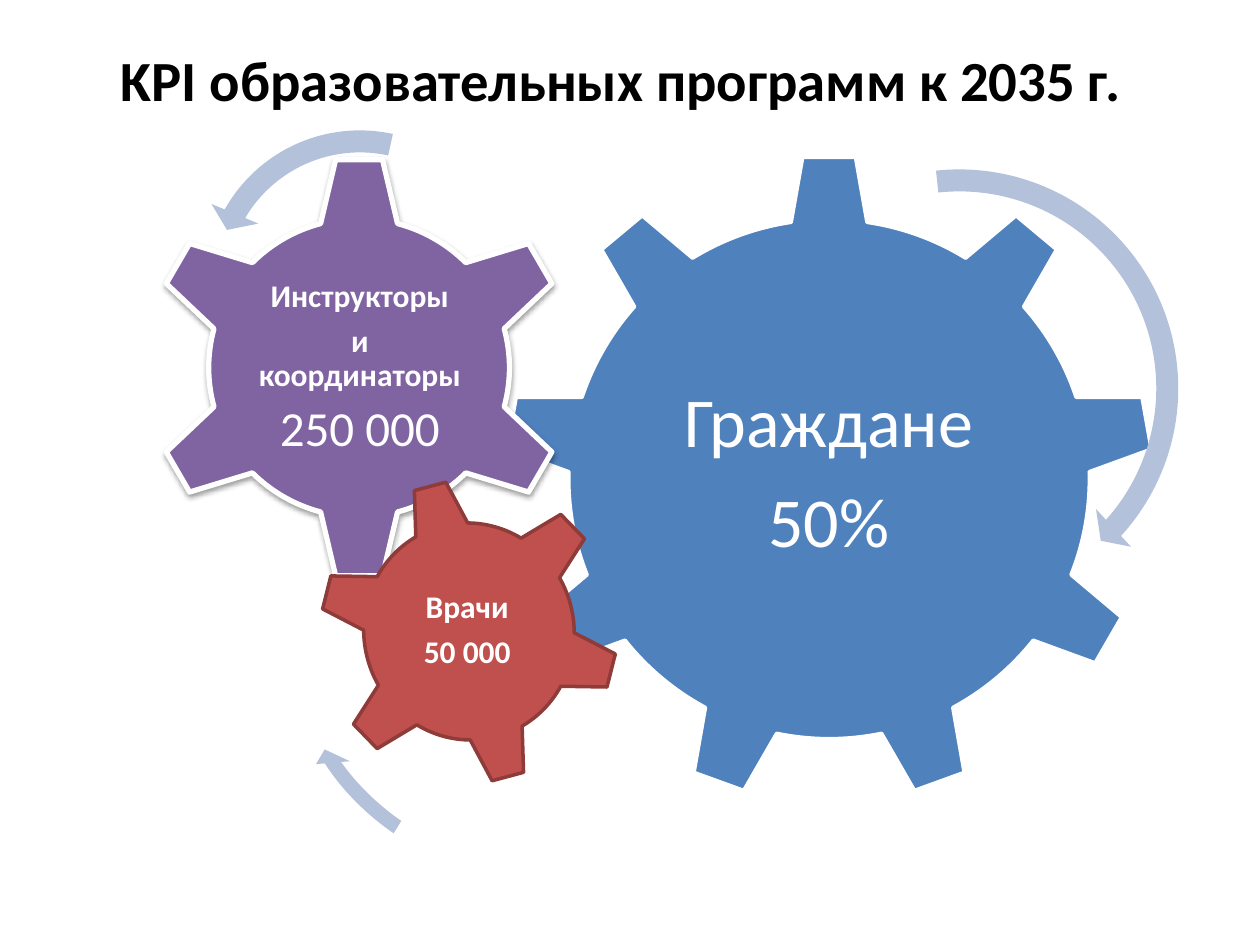
from dataclasses import dataclass

from lxml.etree import SubElement
from pptx import Presentation
from pptx.dml.color import RGBColor
from pptx.enum.shapes import MSO_SHAPE
from pptx.enum.text import MSO_ANCHOR, PP_ALIGN
from pptx.oxml.ns import qn
from pptx.util import Cm, Pt


@dataclass(frozen=True)
class Theme:
    font: str = "Calibri"
    title: str = "000000"
    light: str = "FFFFFF"
    citizens: str = "4F81BD"
    instructors: str = "8064A2"
    doctors: str = "C0504D"
    doctors_edge: str = "8E3B39"
    arrow: str = "B3C1DB"
    title_size: float = 32.4
    large: int = 40
    medium: int = 28
    small: int = 18


THEME = Theme()

# Boxes are left, top, width, height in centimetres.
# Text lines are (text, size, bold).
TITLE = ("KPI образовательных программ к 2035 г.", THEME.title_size, True)
TITLE_BOX = (1.09, 0, 22.86, 3.18)

GEARS = [
    dict(kind=MSO_SHAPE.GEAR_9, box=(10.16, 3.12, 13.11, 13.08),
         fill=THEME.citizens, edge=THEME.light, edge_width=2,
         text_box=(12.8, 6.2, 7.82, 6.73), inset=0.15,
         lines=[("Граждане", THEME.large, False), ("50%", THEME.large, False)]),
    dict(kind=MSO_SHAPE.GEAR_6, box=(2.92, 3.12, 8.64, 8.59),
         fill=THEME.instructors, edge=THEME.light, edge_width=3, shadow=True,
         text_box=(5.11, 5.31, 4.29, 4.24), inset=0.08,
         lines=[("Инструкторы", THEME.small, True),
                ("и координаторы", THEME.small, True),
                ("250 000", THEME.medium, False)]),
    dict(kind=MSO_SHAPE.GEAR_6, box=(6.43, 9.63, 6.05, 6.2), rotation=345,
         fill=THEME.doctors, edge=THEME.doctors_edge, edge_width=2,
         text_box=(7.72, 11, 3.4, 3.45), inset=0.05,
         lines=[("Врачи", THEME.small, True), ("50 000", THEME.small, True)]),
]

# Angles are in degrees: head width, head end, tail start.
ARROWS = [
    dict(kind=MSO_SHAPE.CIRCULAR_ARROW, box=(14.63, 3.12, 9.42, 9.42),
         thickness=0.047, angles=(4.98, 42.15, 263.89), head=0.055),
    dict(kind=MSO_SHAPE.LEFT_CIRCULAR_ARROW, box=(3.84, 2.34, 6.83, 6.83), rotation=35,
         thickness=0.065, angles=(7.17, 174.82, 247.3), head=0.075),
    dict(kind=MSO_SHAPE.CIRCULAR_ARROW, box=(6.68, 11.2, 4.88, 7.37), rotation=306.6,
         thickness=0.06, angles=(6.57, 221.9, 175.14), head=0.07),
]


def color(value):
    return RGBColor.from_string(value)


def add_text(slide, box, lines, *, ink, inset=0.25, line_spacing=1.0, gap=0):
    """Add centred lines; gap is the space after each, as a share of its size."""
    shape = slide.shapes.add_textbox(*map(Cm, box))
    frame = shape.text_frame
    frame.word_wrap = True
    frame.vertical_anchor = MSO_ANCHOR.MIDDLE
    frame.margin_left = frame.margin_right = Cm(inset)
    frame.margin_top = frame.margin_bottom = Cm(inset)
    for index, (text, size, bold) in enumerate(lines):
        paragraph = frame.add_paragraph() if index else frame.paragraphs[0]
        paragraph.alignment = PP_ALIGN.CENTER
        paragraph.line_spacing = line_spacing
        paragraph.space_after = Pt(size * gap)
        run = paragraph.add_run()
        run.text = text
        run.font.name = THEME.font
        run.font.size = Pt(size)
        run.font.bold = bold
        run.font.color.rgb = color(ink)


def add_filled(slide, kind, box, fill, rotation=0):
    shape = slide.shapes.add_shape(kind, *map(Cm, box))
    shape.shadow.inherit = False
    shape.rotation = rotation
    shape.fill.solid()
    shape.fill.fore_color.rgb = color(fill)
    shape.line.fill.background()
    return shape


def add_drop_shadow(shape):
    effects = shape._element.spPr.find(qn("a:effectLst"))
    shadow = SubElement(effects, qn("a:outerShdw"), blurRad=str(Pt(3.1)),
                        dist=str(Pt(1.6)), dir="5400000", rotWithShape="0")
    tint = SubElement(shadow, qn("a:srgbClr"), val="000000")
    SubElement(tint, qn("a:alpha"), val="38000")


def add_gear(slide, *, kind, box, fill, edge, edge_width, text_box, inset, lines,
             rotation=0, shadow=False):
    gear = add_filled(slide, kind, box, fill, rotation)
    gear.line.color.rgb = color(edge)
    gear.line.width = Pt(edge_width)
    if shadow:
        add_drop_shadow(gear)
    add_text(slide, text_box, lines, ink=THEME.light, inset=inset,
             line_spacing=0.9, gap=0.35)


def add_arc_arrow(slide, *, kind, box, thickness, angles, head, rotation=0):
    arrow = add_filled(slide, kind, box, THEME.arrow, rotation)
    # One adjustment unit is 100000 steps of 1/60000 degree.
    values = [thickness, *(angle * 0.6 for angle in angles), head]
    for index, value in enumerate(values):
        arrow.adjustments[index] = value


def main():
    presentation = Presentation()
    presentation.slide_width, presentation.slide_height = Cm(25.4), Cm(19.05)
    slide = presentation.slides.add_slide(presentation.slide_layouts[6])
    add_text(slide, TITLE_BOX, [TITLE], ink=THEME.title)
    for gear in GEARS:
        add_gear(slide, **gear)
    for arrow in ARROWS:
        add_arc_arrow(slide, **arrow)
    presentation.save("out.pptx")


if __name__ == "__main__":
    main()
